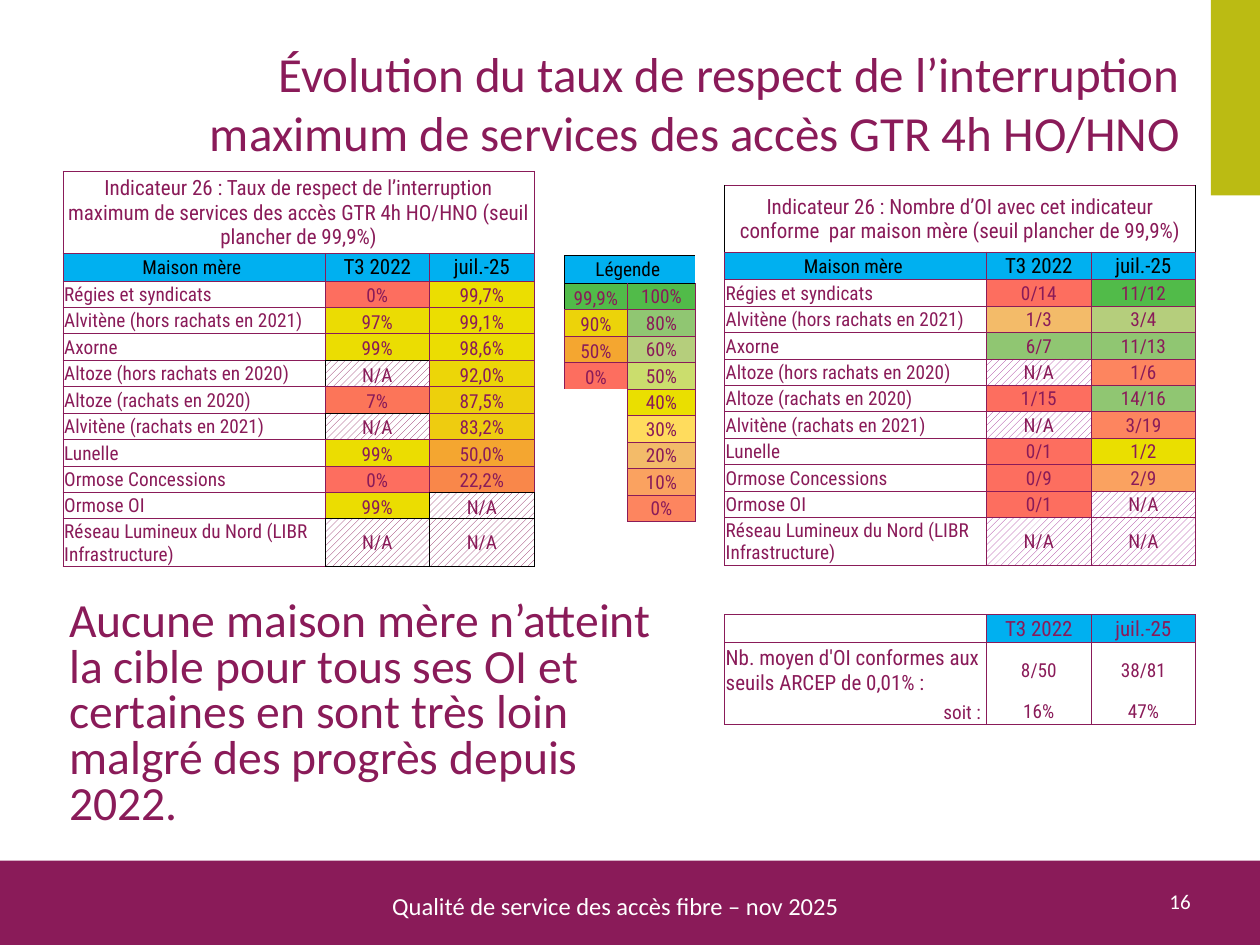
import pptx
import pptx.dml.color
import pptx.enum.dml
import pptx.enum.shapes
import pptx.enum.text
import pptx.oxml.ns
import pptx.util
from lxml import etree

Inches = pptx.util.Inches
Align = pptx.enum.text.PP_ALIGN
Anchor = pptx.enum.text.MSO_ANCHOR
PLUM, BLACK, WHITE, SKY = "8A1B59", "000000", "FFFFFF", "00B0F0"
GREEN, RED, NAMES_WIDTH, VALUES_WIDTH = "51BB49", "FD6E5F", 2.08, 0.83


def color(value):
    return pptx.dml.color.RGBColor.from_string(value)


def add_grid(left, top, widths, heights, rows, edges, hatch=PLUM):
    frame = page.shapes.add_table(len(rows), len(widths), Inches(left), Inches(top),
                                  Inches(sum(widths)), Inches(sum(heights)))
    table = frame.table
    table.first_row = table.horz_banding = False
    for column, width in zip(table.columns, widths):
        column.width = Inches(width)
    for line, height in zip(table.rows, heights):
        line.height = Inches(height)
    for r, row in enumerate(rows):
        for c, (text, fill, size, ink, align, anchor) in enumerate(row):
            cell = table.cell(r, c)
            cell.margin_left = cell.margin_right = cell.margin_top = Inches(0.01)
            cell.margin_bottom = 0
            cell.vertical_anchor = anchor
            properties = cell._tc.get_or_add_tcPr()
            for side in "LRTB":
                edge = etree.SubElement(properties, pptx.oxml.ns.qn("a:ln" + side), w="6350")
                shade = edges.get((r, c, side), PLUM)
                paint = etree.SubElement(edge, pptx.oxml.ns.qn("a:solidFill" if shade else "a:noFill"))
                if shade:
                    etree.SubElement(paint, pptx.oxml.ns.qn("a:srgbClr"), val=shade)
            if text == "N/A":
                cell.fill.patterned()
                cell.fill.pattern = pptx.enum.dml.MSO_PATTERN.UPWARD_DIAGONAL
                cell.fill.fore_color.rgb = color(hatch)
                cell.fill.back_color.rgb = color(WHITE)
            elif fill:
                cell.fill.solid()
                cell.fill.fore_color.rgb = color(fill)
            else:
                cell.fill.background()
            para = cell.text_frame.paragraphs[0]
            para.alignment = align
            if text:
                span = para.add_run()
                span.text = text
                span.font.size = pptx.util.Pt(size)
                span.font.name = "Roboto Condensed"
                span.font.color.rgb = color(ink)
            else:
                etree.SubElement(para._p, pptx.oxml.ns.qn("a:endParaRPr"), sz=str(size * 100))
    return table


deck = pptx.Presentation()
deck.slide_width, deck.slide_height = Inches(10), Inches(7.5)
page = deck.slides.add_slide(deck.slide_layouts[6])

for left, top, width, height, fill in [(0, 6.83, 10, 0.67, PLUM), (9.61, 0, 0.39, 1.55, "BBBB13")]:
    band = page.shapes.add_shape(pptx.enum.shapes.MSO_SHAPE.RECTANGLE, Inches(left), Inches(top),
                                 Inches(width), Inches(height))
    band.shadow.inherit = False
    band.fill.solid()
    band.fill.fore_color.rgb = color(fill)
    band.line.fill.background()

texts = [
    (2.39, 7.02, 4.99, 0.34, ["Qualité de service des accès fibre – nov 2025"],
     14, WHITE, Align.CENTER, Anchor.TOP, 1, True),
    (0.5, 0.19, 9, 1.25, ["Évolution du taux de respect de l’interruption ",
                          "maximum de services des accès GTR 4h HO/HNO "],
     28, PLUM, Align.RIGHT, Anchor.MIDDLE, 1, True),
    (0.5, 4.72, 5.02, 1.98, ["Aucune maison mère n’atteint la cible pour tous ses OI et certaines "
                             "en sont très loin malgré des progrès depuis 2022."],
     27.2, PLUM, Align.LEFT, Anchor.TOP, 0.8, True),
    (9.22, 7.02, 0.28, 0.27, ["16"], 12, WHITE, Align.RIGHT, Anchor.MIDDLE, 1, False),
]
for left, top, width, height, lines, size, ink, align, anchor, spacing, wrap in texts:
    box = page.shapes.add_textbox(Inches(left), Inches(top), Inches(width), Inches(height))
    frame = box.text_frame
    frame.word_wrap = wrap
    frame.vertical_anchor = anchor
    frame.margin_left = frame.margin_right = frame.margin_top = frame.margin_bottom = Inches(0.05)
    para = frame.paragraphs[0]
    para.alignment = align
    para.line_spacing = spacing
    for number, line in enumerate(lines):
        if number:
            para.add_line_break()
        span = para.add_run()
        span.text = line
        span.font.size = pptx.util.Pt(size)
        span.font.name = "Calibri"
        span.font.color.rgb = color(ink)

owners = ["Régies et syndicats", "Alvitène (hors rachats en 2021)", "Axorne",
          "Altoze (hors rachats en 2020)", "Altoze (rachats en 2020)",
          "Alvitène (rachats en 2021)", "Lunelle", "Ormose Concessions", "Ormose OI",
          "Réseau Lumineux du Nord (LIBR Infrastructure)"]
rates = [
    ("0%", RED, "99,7%", "EBDE01"), ("97%", "EBDC03", "99,1%", "EBDE01"),
    ("99%", "EBDD02", "98,6%", "EBDD02"), ("N/A", None, "92,0%", "ECD608"),
    ("7%", "FC7559", "87,5%", "EDD00C"), ("N/A", None, "83,2%", "EECC10"),
    ("99%", "EBDD01", "50,0%", "F4A630"), ("0%", RED, "22,2%", "F9874A"),
    ("99%", "EBDD01", "N/A", None), ("N/A", None, "N/A", None),
]
counts = [
    ("0/14", RED, "11/12", GREEN), ("1/3", "F3BB69", "3/4", "B5CE7C"),
    ("6/7", "90C672", "11/13", "90C672"), ("N/A", None, "1/6", "FD855F"),
    ("1/15", RED, "14/16", "90C672"), ("N/A", None, "3/19", "FD855F"),
    ("0/1", RED, "1/2", "EADF00"), ("0/9", RED, "2/9", "FAA260"),
    ("0/1", RED, "N/A", None), ("N/A", None, "N/A", None),
]
rate_edges = {}
for r, (first, _, second, _) in enumerate(rates, 2):
    for c, value in [(1, first), (2, second)]:
        if value == "N/A":
            sides = [(r, c, "L"), (r, c, "T"), (r, c - 1, "R"), (r - 1, c, "B")]
            if r >= 10:
                sides += [(r, c, "R"), (r, c, "B")]
            rate_edges.update(dict.fromkeys(sides, BLACK))
count_edges = {(0, 0, "L"): BLACK, (0, 2, "R"): BLACK, (0, 0, "R"): BLACK}

indicators = [
    (0.5, 1.36, 0.65, "Indicateur 26 : Taux de respect de l’interruption maximum de services "
     "des accès GTR 4h HO/HNO (seuil plancher de 99,9%)", rates, rate_edges, PLUM, Anchor.BOTTOM),
    (5.75, 1.47, 0.53, "Indicateur 26 : Nombre d’OI avec cet indicateur conforme  par maison mère "
     "(seuil plancher de 99,9%)", counts, count_edges, "A02B93", Anchor.MIDDLE),
]
columns = [NAMES_WIDTH, VALUES_WIDTH, VALUES_WIDTH]
blank = ("", None, 11, PLUM, Align.CENTER, Anchor.MIDDLE)
for left, top, height, heading, values, edges, hatch, anchor in indicators:
    rows = [[(heading, None, 12, PLUM, Align.CENTER, Anchor.MIDDLE), blank, blank],
            [(label, SKY, size, BLACK, Align.CENTER, Anchor.MIDDLE)
             for label, size in [("Maison mère ", 11), ("T3 2022", 12), ("juil.-25", 12)]]]
    for owner, (first, first_fill, second, second_fill) in zip(owners, values):
        place = Anchor.MIDDLE if owner == owners[-1] else anchor
        rows.append([(owner, None, 11, PLUM, Align.LEFT, Anchor.MIDDLE),
                     (first, first_fill, 11, PLUM, Align.CENTER, place),
                     (second, second_fill, 11, PLUM, Align.CENTER, place)])
    table = add_grid(left, top, columns, [height, 0.22] + [0.21] * 9 + [0.36], rows, edges, hatch)
    table.cell(0, 0).merge(table.cell(0, 2))

thresholds = [("99,9%", GREEN), ("90%", "ECD30A"), ("50%", "F4A630"), ("0%", RED)] + [("", None)] * 5
shares = [("100%", GREEN), ("80%", "90C672"), ("60%", "B5CE7C"), ("50%", "CBDD6D"),
          ("40%", "EADF00"), ("30%", "FFDC5D"), ("20%", "F3BB69"), ("10%", "FAA260"), ("0%", "FD855F")]
legend = [[("Légende ", SKY, 11, BLACK, Align.CENTER, Anchor.MIDDLE), blank]]
for threshold, share in zip(thresholds, shares):
    legend.append([(*threshold, 11, PLUM, Align.CENTER, Anchor.BOTTOM),
                   (*share, 11, PLUM, Align.CENTER, Anchor.MIDDLE)])
legend_edges = {(0, c, side): BLACK for c in (0, 1) for side in "LTB"}
legend_edges.update({(0, 0, "R"): None, (0, 1, "R"): None, (1, 0, "L"): BLACK,
                     (1, 0, "T"): BLACK, (1, 1, "T"): BLACK, (4, 0, "B"): WHITE})
legend_edges.update({(r, 0, side): WHITE for r in range(5, 10) for side in "LTB"})
table = add_grid(4.48, 2.03, [0.5, 0.54], [0.22] + [0.21] * 9, legend, legend_edges)
table.cell(0, 0).merge(table.cell(0, 1))

summary = [
    [("", None, 12, Align.LEFT, Anchor.MIDDLE), ("T3 2022", SKY, 12, Align.CENTER, Anchor.MIDDLE),
     ("juil.-25", SKY, 12, Align.CENTER, Anchor.MIDDLE)],
    [("Nb. moyen d'OI conformes aux seuils ARCEP de 0,01% :", None, 12, Align.LEFT, Anchor.MIDDLE),
     ("8/50", None, 11, Align.CENTER, Anchor.MIDDLE), ("38/81", None, 11, Align.CENTER, Anchor.MIDDLE)],
    [("soit : ", None, 11, Align.RIGHT, Anchor.BOTTOM), ("16%", None, 11, Align.CENTER, Anchor.MIDDLE),
     ("47%", None, 11, Align.CENTER, Anchor.MIDDLE)],
]
rows = [[(text, fill, size, PLUM, align, anchor) for text, fill, size, align, anchor in row] for row in summary]
open_edges = {(r, c, side): None for r, side in [(1, "B"), (2, "T")] for c in range(3)}
add_grid(5.75, 4.88, columns, [0.22, 0.44, 0.21], rows, open_edges)

deck.save("out.pptx")
